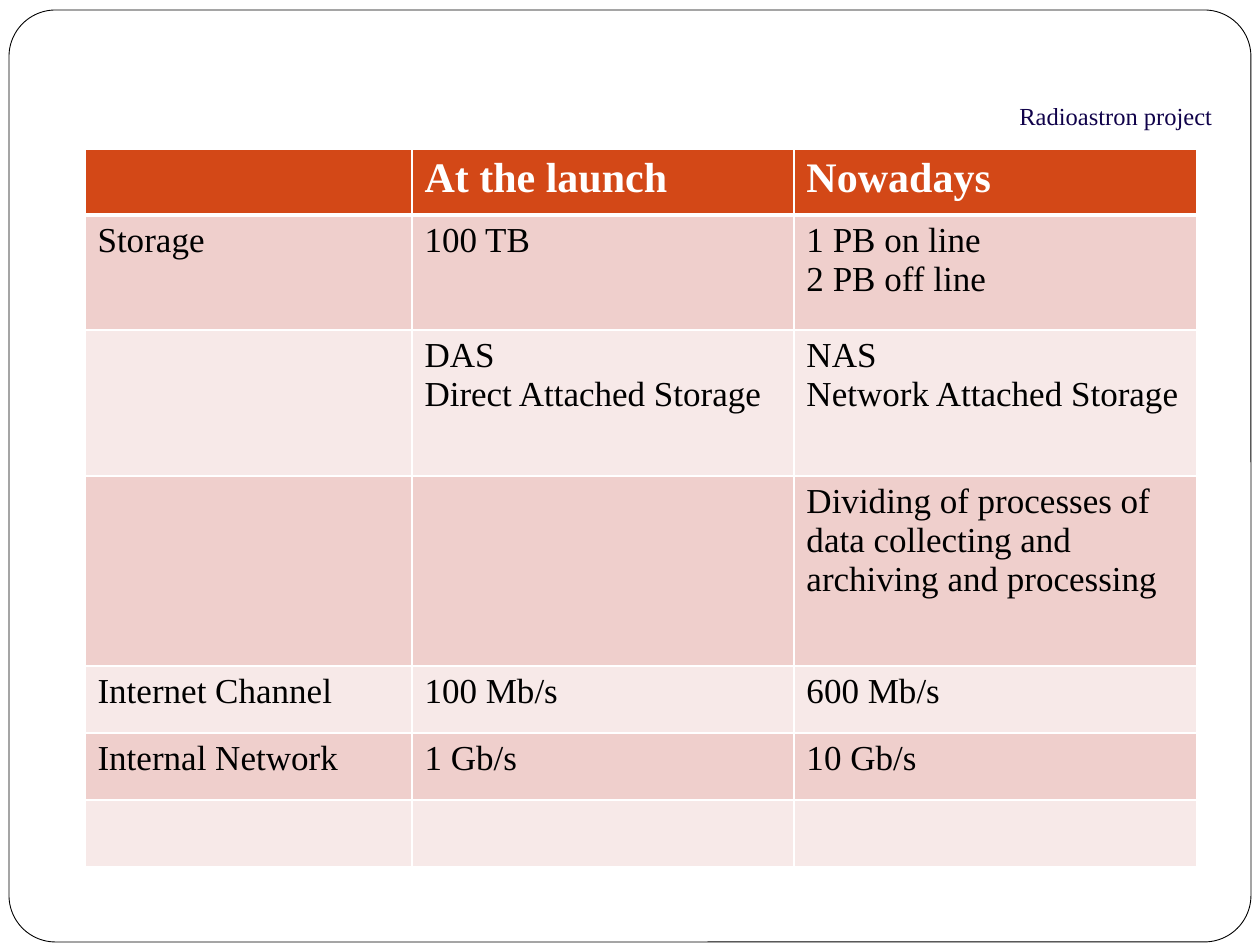
from lxml.etree import SubElement
from pptx import Presentation
from pptx.dml.color import RGBColor as Rgb
from pptx.enum.shapes import MSO_SHAPE as Shape
from pptx.enum.text import MSO_ANCHOR as Anchor
from pptx.oxml.ns import qn
from pptx.util import Emu, Pt

PX_PER_INCH = 126
COLORS = {
    "white": "FFFFFF",
    "black": "000000",
    "header": "D34817",
    "odd": "EFCFCC",
    "even": "F7E9E8",
    "label": "10024A",
}
HEADER_FONT = {"name": "Times New Roman", "size": Pt(24), "bold": True}
BODY_FONT = {"name": "Times New Roman", "size": Pt(20), "bold": False}
LABEL_FONT = {"name": "Times New Roman", "size": Pt(14), "bold": False}

COLUMN_WIDTHS = [327, 382, 403]
ROW_HEIGHTS = [66, 115, 146, 190, 67, 67, 67]
ROWS = [
    ["", "At the launch", "Nowadays"],
    ["Storage", "100 TB", "1 PB on line\n2 PB off line"],
    ["", "DAS\nDirect Attached Storage", "NAS\nNetwork Attached Storage"],
    ["", "", "Dividing of processes of data collecting and archiving and processing"],
    ["Internet Channel", "100 Mb/s", "600 Mb/s"],
    ["Internal Network", "1 Gb/s", "10 Gb/s"],
    ["", "", ""],
]


def px(length):
    """Turn pixels into EMU."""
    return Emu(round(length * 914400 / PX_PER_INCH))


def color(name):
    """Look up a colour by name."""
    return Rgb.from_string(COLORS[name])


def write(frame, text, font, color_name):
    """Fill a text frame, one paragraph a line, with one font."""
    frame.text = text
    for para in frame.paragraphs:
        for span in para.runs:
            for key, value in font.items():
                setattr(span.font, key, value)
            span.font.color.rgb = color(color_name)


def add_borders(cell, widths):
    """Draw white borders with the given width in points for each side."""
    properties = cell._tc.get_or_add_tcPr()
    for position, (side, width) in enumerate(widths.items()):
        line = SubElement(properties, qn(f"a:ln{side}"), w=str(Pt(width)))
        fill = SubElement(line, qn("a:solidFill"))
        SubElement(fill, qn("a:srgbClr"), val=COLORS["white"])
        properties.insert(position, line)


def add_frame(page, left, top, width, height):
    """Add the rounded outline around the page."""
    box = page.shapes.add_shape(
        Shape.ROUNDED_RECTANGLE, px(left), px(top), px(width), px(height)
    )
    box.adjustments[0] = 0.05
    box.shadow.inherit = False
    box.fill.solid()
    box.fill.fore_color.rgb = color("white")
    box.line.color.rgb = color("black")
    box.line.width = Pt(0.5)


def add_label(page, left, top, width, height):
    """Add the project label."""
    box = page.shapes.add_textbox(px(left), px(top), px(width), px(height))
    box.text_frame.word_wrap = True
    box.text_frame.vertical_anchor = Anchor.MIDDLE
    write(box.text_frame, "Radioastron project", LABEL_FONT, "label")


def add_comparison(page, left, top):
    """Add the table comparing the launch with the present."""
    table = page.shapes.add_table(
        len(ROWS), len(COLUMN_WIDTHS), px(left), px(top),
        px(sum(COLUMN_WIDTHS)), px(sum(ROW_HEIGHTS)),
    ).table
    for column, width in zip(table.columns, COLUMN_WIDTHS):
        column.width = px(width)
    for index, (texts, height) in enumerate(zip(ROWS, ROW_HEIGHTS)):
        table.rows[index].height = px(height)
        header = index == 0
        fill = "header" if header else ("even", "odd")[index % 2]
        font = HEADER_FONT if header else BODY_FONT
        widths = {"L": 1, "R": 1, "T": 3 if index == 1 else 1, "B": 3 if header else 1}
        for cell, text in zip(table.rows[index].cells, texts):
            cell.fill.solid()
            cell.fill.fore_color.rgb = color(fill)
            add_borders(cell, widths)
            write(cell.text_frame, text, font, "white" if header else "black")


def main():
    """Build and save the deck."""
    deck = Presentation()
    deck.slide_width, deck.slide_height = px(1260), px(945)
    page = deck.slides.add_slide(deck.slide_layouts[6])
    add_frame(page, 9, 10, 1242, 932)
    add_comparison(page, 85, 149)
    add_label(page, 1007, 96, 238, 39)
    deck.save("out.pptx")


if __name__ == "__main__":
    main()
